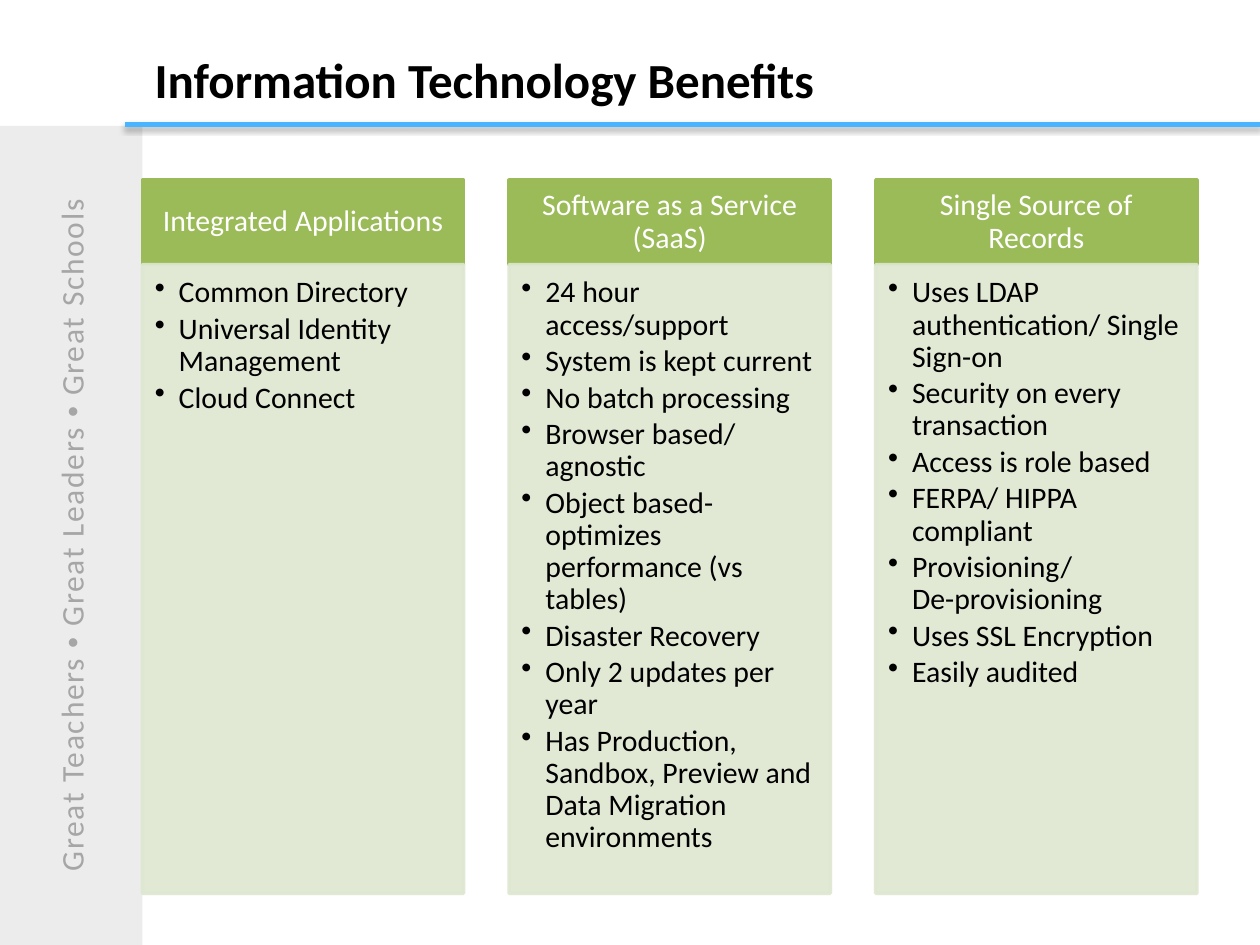
from lxml import etree
from pptx import Presentation
from pptx import util as u
from pptx.dml.color import RGBColor
from pptx.enum import shapes, text
from pptx.oxml import parse_xml
from pptx.oxml.ns import nsdecls, qn


def paint(color_format, hex_color, opacity=100):
    """Set a fill, line or font colour, with its opacity in percent."""
    if hasattr(color_format, "solid"):
        color_format.solid()
        color_format = color_format.fore_color
        owner = color_format._xFill
    else:
        owner = None
    color_format.rgb = RGBColor.from_string(hex_color)
    if opacity < 100:
        alpha = etree.SubElement(owner.find(qn("a:srgbClr")), qn("a:alpha"))
        alpha.set("val", str(opacity * 1000))


def panel(left, top, width, height, color, opacity=100, line_opacity=None):
    """Add a flat rectangle, outlined when a line opacity is given."""
    box = slide.shapes.add_shape(shapes.MSO_SHAPE.RECTANGLE, *map(u.Inches, (left, top, width, height)))
    box.shadow.inherit = False
    paint(box.fill, color, opacity)
    if line_opacity is None:
        box.line.fill.background()
    else:
        paint(box.line.fill, color, line_opacity)
        box.line.width = u.Pt(2)
    box.text_frame.word_wrap = True
    return box


prs = Presentation()
WIDTH, HEIGHT = 10, 7.5
prs.slide_width, prs.slide_height = u.Inches(WIDTH), u.Inches(HEIGHT)
slide = prs.slides.add_slide(prs.slide_layouts[6])

# Side band with the vertical motto
BAND = 1.13
motto_band = panel(0, 1, BAND, HEIGHT - 1, "D9D9D9", 49)
motto = motto_band.text_frame
motto._txBody.bodyPr.set("vert", "vert270")
motto.vertical_anchor = text.MSO_ANCHOR.MIDDLE
motto_line = motto.paragraphs[0]
motto_line.alignment = text.PP_ALIGN.CENTER
for words in ("Great Teachers ", "•", " Great Leaders ", "•", " Great Schools"):
    run = motto_line.add_run()
    run.text = words
    run.font.size = u.Pt(18)
    run.font.name = "Arial" if words == "•" else "Calibri"
    paint(run.font.color, "A6A6A6")
    run._r.get_or_add_rPr().set("spc", "100")

# Rule under the title
rule = slide.shapes.add_connector(
    shapes.MSO_CONNECTOR.STRAIGHT, u.Inches(WIDTH), u.Inches(0.99), u.Inches(0.99), u.Inches(0.99))
paint(rule.line.fill, "49B4FF")
rule.line.width = u.Pt(3)
rule._element.spPr.append(parse_xml(
    f'<a:effectLst {nsdecls("a")}><a:outerShdw blurRad="{u.Pt(3.1)}" dist="{u.Pt(1.8)}" dir="5400000" '
    'rotWithShape="0"><a:srgbClr val="000000"><a:alpha val="35000"/></a:srgbClr></a:outerShdw></a:effectLst>'))

# Three benefit columns: heading above a bulleted list
benefits = {
    "Integrated Applications": [
        "Common Directory", "Universal Identity Management", "Cloud Connect"],
    "Software as a Service (SaaS)": [
        "24 hour access/support", "System is kept current", "No batch processing",
        "Browser based/ agnostic", "Object based- optimizes performance (vs tables)",
        "Disaster Recovery", "Only 2 updates per year",
        "Has Production, Sandbox, Preview and Data Migration environments"],
    "Single Source of Records": [
        "Uses LDAP authentication/ Single Sign-on", "Security on every transaction",
        "Access is role based", "FERPA/ HIPPA compliant", "Provisioning/\vDe-provisioning",
        "Uses SSL Encryption", "Easily audited"],
}
COLUMN, PITCH = 2.55, 2.91
HEAD_TOP, HEAD, BODY = 1.43, 0.67, 4.99
INDENT = u.Inches(0.19)

for column, (heading, points) in enumerate(benefits.items()):
    left = BAND + column * PITCH
    head = panel(left, HEAD_TOP, COLUMN, HEAD, "9BBB59", line_opacity=100).text_frame
    head.margin_left = head.margin_right = u.Inches(0.13)
    head.margin_top = head.margin_bottom = u.Inches(0.08)
    head.vertical_anchor = text.MSO_ANCHOR.MIDDLE
    head.text = heading
    head.paragraphs[0].alignment = text.PP_ALIGN.CENTER

    body = panel(left, HEAD_TOP + HEAD, COLUMN, BODY, "DEE7D1", 90, 90).text_frame
    body.margin_left = body.margin_top = u.Inches(0.1)
    body.margin_right, body.margin_bottom = u.Inches(0.13), u.Inches(0.15)
    body.vertical_anchor = text.MSO_ANCHOR.TOP
    body.text = "\n".join(points)
    for point in body.paragraphs:
        point.alignment = text.PP_ALIGN.LEFT
        point.space_after = u.Pt(2.5)
        props = point._p.get_or_add_pPr()
        props.set("marL", str(INDENT))
        props.set("indent", str(-INDENT))
        etree.SubElement(props, qn("a:buChar")).set("char", "•")

    for frame, color in ((head, "FFFFFF"), (body, "000000")):
        for paragraph in frame.paragraphs:
            paragraph.line_spacing = 0.9
            for run in paragraph.runs:
                run.font.size, run.font.name = u.Pt(17), "Calibri"
                paint(run.font.color, color)

# Title
title = slide.shapes.add_textbox(*map(u.Inches, (BAND, 0.15, 7.77, 0.95))).text_frame
title.word_wrap = True
title.vertical_anchor = text.MSO_ANCHOR.MIDDLE
title.text = "Information Technology Benefits"
title_font = title.paragraphs[0].runs[0].font
title_font.size, title_font.name, title_font.bold = u.Pt(28), "Calibri", True
paint(title_font.color, "000000")

prs.save("out.pptx")
